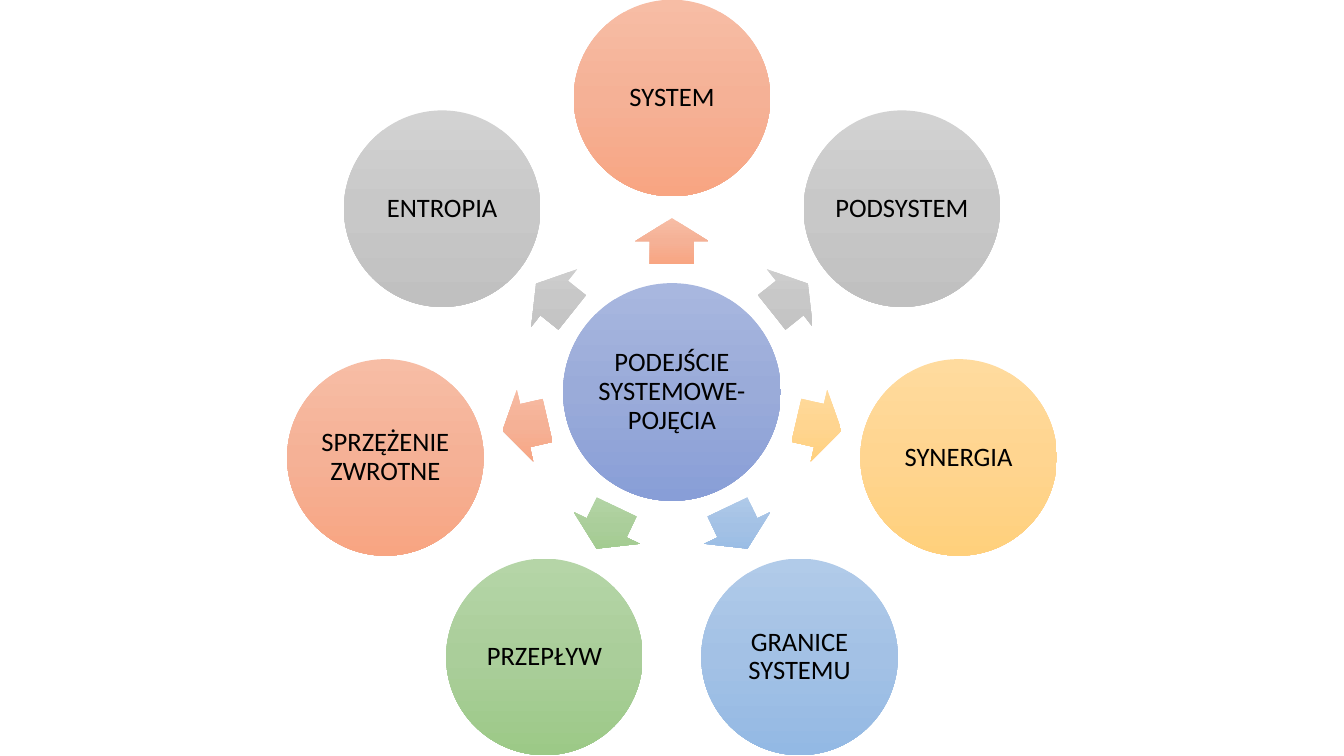
from copy import deepcopy
from dataclasses import dataclass
from math import cos, radians, sin

from pptx import Presentation
from pptx.dml.color import RGBColor
from pptx.enum.shapes import MSO_SHAPE
from pptx.enum.text import MSO_ANCHOR, PP_ALIGN
from pptx.oxml.ns import qn
from pptx.shapes.autoshape import Shape
from pptx.shapes.shapetree import SlideShapes
from pptx.util import Pt

ELLIPSE = MSO_SHAPE.OVAL
ARROW = MSO_SHAPE.RIGHT_ARROW
MIDDLE = MSO_ANCHOR.MIDDLE
CENTER = PP_ALIGN.CENTER

Gradient = tuple[RGBColor, RGBColor, RGBColor]

BLACK = RGBColor(0x00, 0x00, 0x00)
INDIGO = (RGBColor(0xA8, 0xB7, 0xDF), RGBColor(0x9A, 0xAB, 0xD9), RGBColor(0x88, 0x9E, 0xD7))
ORANGE = (RGBColor(0xF7, 0xBD, 0xA5), RGBColor(0xF5, 0xB1, 0x96), RGBColor(0xF8, 0xA5, 0x82))
GREY = (RGBColor(0xD2, 0xD2, 0xD2), RGBColor(0xC8, 0xC8, 0xC8), RGBColor(0xC0, 0xC0, 0xC0))
YELLOW = (RGBColor(0xFF, 0xDB, 0x9E), RGBColor(0xFF, 0xD5, 0x90), RGBColor(0xFF, 0xD0, 0x7C))
BLUE = (RGBColor(0xB1, 0xCB, 0xE9), RGBColor(0xA3, 0xC1, 0xE5), RGBColor(0x93, 0xB9, 0xE4))
GREEN = (RGBColor(0xB5, 0xD5, 0xA7), RGBColor(0xAA, 0xCE, 0x9A), RGBColor(0x9C, 0xC9, 0x87))

# All lengths are in points.
SLIDE_WIDTH, SLIDE_HEIGHT = 960, 540
HUB_X, HUB_Y = 480, 280
HUB_DIAMETER = 155.5
CONCEPT_DIAMETER = 140.4
CONCEPT_ORBIT = 210
ARROW_LENGTH, ARROW_WIDTH = 33, 52.5
ARROW_ORBIT = 107.7

FRAME_FORMAT = {
    "word_wrap": True,
    "vertical_anchor": MIDDLE,
    "margin_left": Pt(2),
    "margin_top": Pt(2),
    "margin_right": Pt(2),
    "margin_bottom": Pt(2),
}
PARAGRAPH_FORMAT = {"alignment": CENTER, "line_spacing": 0.9}
FONT_FORMAT = {"name": "Calibri", "size": Pt(19)}


@dataclass(frozen=True)
class Concept:
    label: str
    gradient: Gradient


HUB = Concept("PODEJŚCIE SYSTEMOWE- POJĘCIA", INDIGO)
# Clockwise from the top.
CONCEPTS = (
    Concept("SYSTEM", ORANGE),
    Concept("PODSYSTEM", GREY),
    Concept("SYNERGIA", YELLOW),
    Concept("GRANICE SYSTEMU", BLUE),
    Concept("PRZEPŁYW", GREEN),
    Concept("SPRZĘŻENIE ZWROTNE", ORANGE),
    Concept("ENTROPIA", GREY),
)


def apply_format(target: object, values: dict[str, object]) -> None:
    for name, value in values.items():
        setattr(target, name, value)


def fill_gradient(shape: Shape, gradient: Gradient) -> None:
    """Fill from top to bottom in three stops, whatever the shape's rotation."""
    fill = shape.fill
    fill.gradient()
    fill.gradient_angle = 270
    gradient_fill = shape._element.spPr.find(qn("a:gradFill"))
    gradient_fill.set("rotWithShape", "0")
    stop_list = gradient_fill.find(qn("a:gsLst"))
    stop_list.insert(1, deepcopy(stop_list[0]))
    for index, (stop, color) in enumerate(zip(fill.gradient_stops, gradient)):
        stop.position = index / 2
        stop.color.rgb = color


def add_centered_shape(shapes: SlideShapes, kind: MSO_SHAPE, x: float, y: float,
                       width: float, height: float, gradient: Gradient) -> Shape:
    shape = shapes.add_shape(kind, Pt(x - width / 2), Pt(y - height / 2),
                             Pt(width), Pt(height))
    shape.shadow.inherit = False
    shape.line.fill.background()
    fill_gradient(shape, gradient)
    return shape


def add_circle(shapes: SlideShapes, concept: Concept, x: float, y: float,
               diameter: float) -> None:
    circle = add_centered_shape(shapes, ELLIPSE, x, y, diameter, diameter, concept.gradient)
    frame = circle.text_frame
    frame.text = concept.label
    paragraph = frame.paragraphs[0]
    apply_format(frame, FRAME_FORMAT)
    apply_format(paragraph, PARAGRAPH_FORMAT)
    font = paragraph.runs[0].font
    apply_format(font, FONT_FORMAT)
    font.color.rgb = BLACK


def orbit_point(angle: float, radius: float) -> tuple[float, float]:
    return (HUB_X + radius * cos(radians(angle)),
            HUB_Y + radius * sin(radians(angle)))


def add_arrow(shapes: SlideShapes, angle: float, gradient: Gradient) -> None:
    x, y = orbit_point(angle, ARROW_ORBIT)
    arrow = add_centered_shape(shapes, ARROW, x, y, ARROW_LENGTH, ARROW_WIDTH, gradient)
    arrow.adjustments[0] = 0.6
    arrow.adjustments[1] = 0.5
    arrow.rotation = angle % 360


def main() -> None:
    presentation = Presentation()
    presentation.slide_width = Pt(SLIDE_WIDTH)
    presentation.slide_height = Pt(SLIDE_HEIGHT)
    slide = presentation.slides.add_slide(presentation.slide_layouts[6])

    add_circle(slide.shapes, HUB, HUB_X, HUB_Y, HUB_DIAMETER)
    for index, concept in enumerate(CONCEPTS):
        angle = index * 360 / len(CONCEPTS) - 90
        add_arrow(slide.shapes, angle, concept.gradient)
        x, y = orbit_point(angle, CONCEPT_ORBIT)
        add_circle(slide.shapes, concept, x, y, CONCEPT_DIAMETER)

    presentation.save("out.pptx")


if __name__ == "__main__":
    main()
